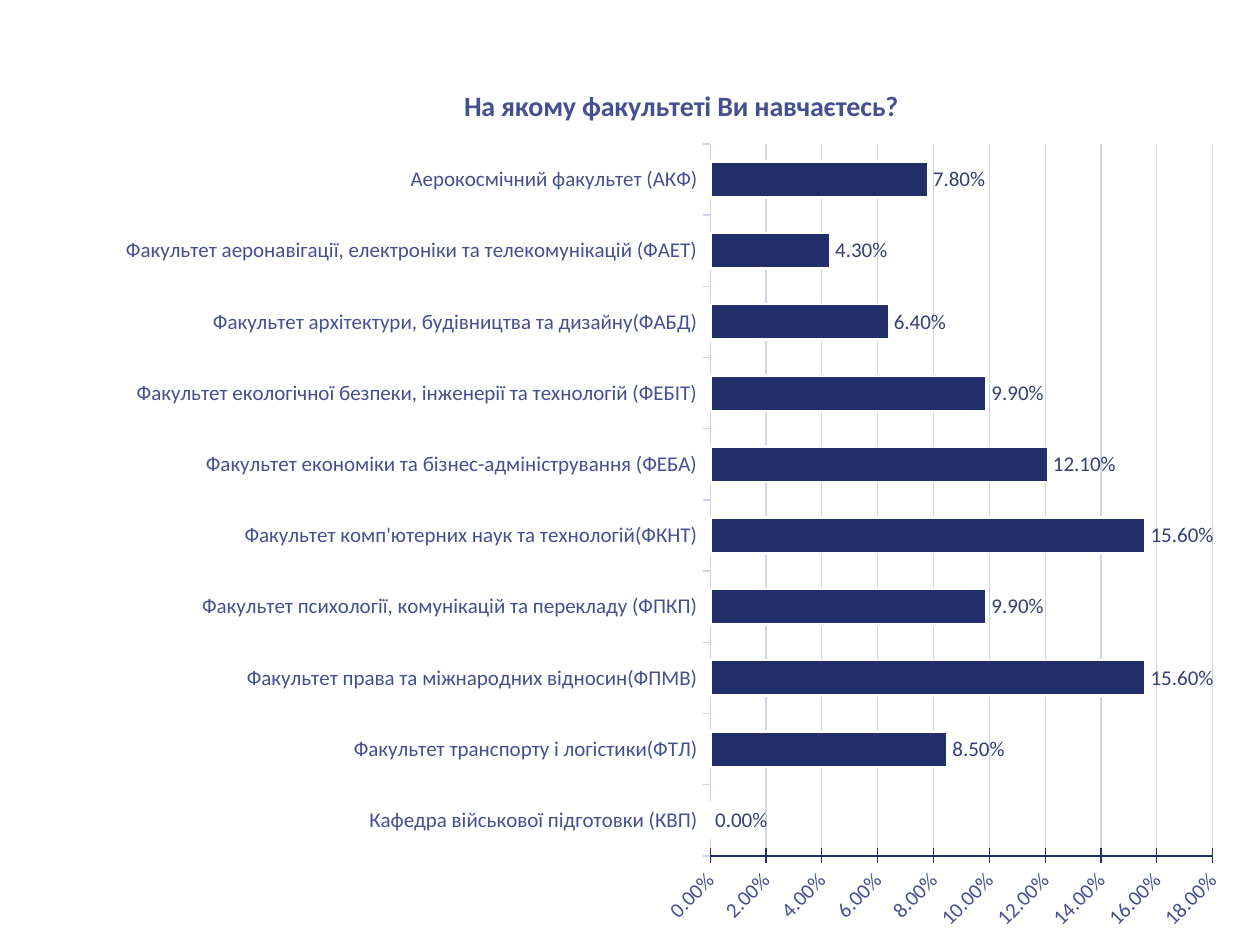
from lxml import etree
from pptx import Presentation
from pptx.chart.data import CategoryChartData
from pptx.dml.color import RGBColor
from pptx.enum.chart import XL_CHART_TYPE, XL_LABEL_POSITION, XL_TICK_MARK
from pptx.enum.shapes import MSO_SHAPE
from pptx.oxml.ns import qn
from pptx.util import Emu, Pt

BAR = XL_CHART_TYPE.BAR_CLUSTERED
OUTSIDE_END = XL_LABEL_POSITION.OUTSIDE_END
TICK_OUT, TICK_CROSS, TICK_NONE = XL_TICK_MARK.OUTSIDE, XL_TICK_MARK.CROSS, XL_TICK_MARK.NONE
RECTANGLE = MSO_SHAPE.RECTANGLE

PX = 914400 / 126
FONT = "Calibri"
PERCENT = "0.00%"
WHITE, NAVY, INDIGO, SLATE, INK, LAVENDER = (
    "FFFFFF", "202F6A", "44508F", "353F70", "101322", "D0D4E9")

TITLE = "На якому факультеті Ви навчаєтесь?"
# Bars run from the bottom up
FACULTIES = [
    ("Кафедра військової підготовки (КВП)", 0),
    ("Факультет транспорту і логістики(ФТЛ)", 0.085),
    ("Факультет права та міжнародних відносин(ФПМВ)", 0.156),
    ("Факультет психології, комунікацій та перекладу (ФПКП)", 0.099),
    ("Факультет комп'ютерних наук та технологій(ФКНТ)", 0.156),
    ("Факультет економіки та бізнес-адміністрування (ФЕБА)", 0.121),
    ("Факультет екологічної безпеки, інженерії та технологій (ФЕБІТ)", 0.099),
    ("Факультет архітектури, будівництва та дизайну(ФАБД)", 0.064),
    ("Факультет аеронавігації, електроніки та телекомунікацій (ФАЕТ)", 0.043),
    ("Аерокосмічний факультет (АКФ)", 0.078),
]


def px(*lengths):
    return [Emu(round(length * PX)) for length in lengths]


def rgb(color):
    return RGBColor.from_string(color)


def style_font(font, size, color, bold=False):
    font.name, font.size, font.bold = FONT, Pt(size), bold
    font.color.rgb = rgb(color)


def style_line(line, color, width):
    line.color.rgb = rgb(color)
    line.width = Pt(width)


def make_layout(**fractions):
    """Manual chart layout, in fractions of the chart area."""
    layout = etree.Element(qn("c:layout"))
    manual = etree.SubElement(layout, qn("c:manualLayout"))
    if "w" in fractions:
        etree.SubElement(manual, qn("c:layoutTarget"), val="inner")
    for side in "xy":
        etree.SubElement(manual, qn(f"c:{side}Mode"), val="edge")
    for side, value in fractions.items():
        etree.SubElement(manual, qn(f"c:{side}"), val=str(value))
    return layout


def clear_layout(element):
    for old in element.findall(qn("c:layout")):
        element.remove(old)


def add_backdrop(slide):
    backdrop = slide.shapes.add_shape(RECTANGLE, *px(64, 76, 1171, 863))
    backdrop.shadow.inherit = False
    backdrop.fill.solid()
    backdrop.fill.fore_color.rgb = rgb(WHITE)
    style_line(backdrop.line, WHITE, 1.25)


def add_faculty_chart(slide):
    data = CategoryChartData(number_format=PERCENT)
    data.categories = [faculty for faculty, _ in FACULTIES]
    data.add_series("Series 1", [share for _, share in FACULTIES])
    chart = slide.shapes.add_chart(BAR, *px(105, 55, 1142, 890), data).chart
    chart.has_legend = False
    style_font(chart.font, 10, INK)
    plot_area = chart._chartSpace.chart.plotArea
    clear_layout(plot_area)
    plot_area.insert(0, make_layout(x=0.53, y=0.1, w=0.44, h=0.8))
    return chart


def style_title(chart):
    heading = chart.chart_title
    run = heading.text_frame.paragraphs[0].add_run()
    run.text = TITLE
    style_font(run.font, 16, INDIGO, bold=True)
    clear_layout(heading._element)
    heading._element.find(qn("c:tx")).addnext(make_layout(x=0.31, y=0.03))


def style_axis(axis, color, tick):
    style_font(axis.tick_labels.font, 12, INDIGO)
    style_line(axis.format.line, color, 0.75)
    axis.major_tick_mark = tick
    axis.minor_tick_mark = TICK_NONE


def style_axes(chart):
    style_axis(chart.category_axis, LAVENDER, TICK_OUT)
    shares = chart.value_axis
    style_axis(shares, NAVY, TICK_CROSS)
    shares.minimum_scale, shares.maximum_scale, shares.major_unit = 0, 0.18, 0.02
    shares.tick_labels.number_format = PERCENT
    shares.tick_labels.number_format_is_linked = False
    style_line(shares.major_gridlines.format.line, LAVENDER, 0.75)
    # Slant the percentages by 45 degrees
    shares._element.find(qn("c:txPr")).find(qn("a:bodyPr")).set("rot", "-2700000")


def style_bars(chart):
    plot = chart.plots[0]
    plot.gap_width = 100
    plot.vary_by_categories = False
    bars = plot.series[0]
    bars.format.fill.solid()
    bars.format.fill.fore_color.rgb = rgb(NAVY)
    style_line(bars.format.line, WHITE, 1.5)
    labels = bars.data_labels
    labels.show_value = True
    labels.position = OUTSIDE_END
    labels.number_format = PERCENT
    labels.number_format_is_linked = False
    style_font(labels.font, 12, SLATE)


def main():
    deck = Presentation()
    deck.slide_width, deck.slide_height = px(1260, 945)
    slide = deck.slides.add_slide(deck.slide_layouts[6])
    add_backdrop(slide)
    chart = add_faculty_chart(slide)
    style_title(chart)
    style_axes(chart)
    style_bars(chart)
    deck.save("out.pptx")


if __name__ == "__main__":
    main()
